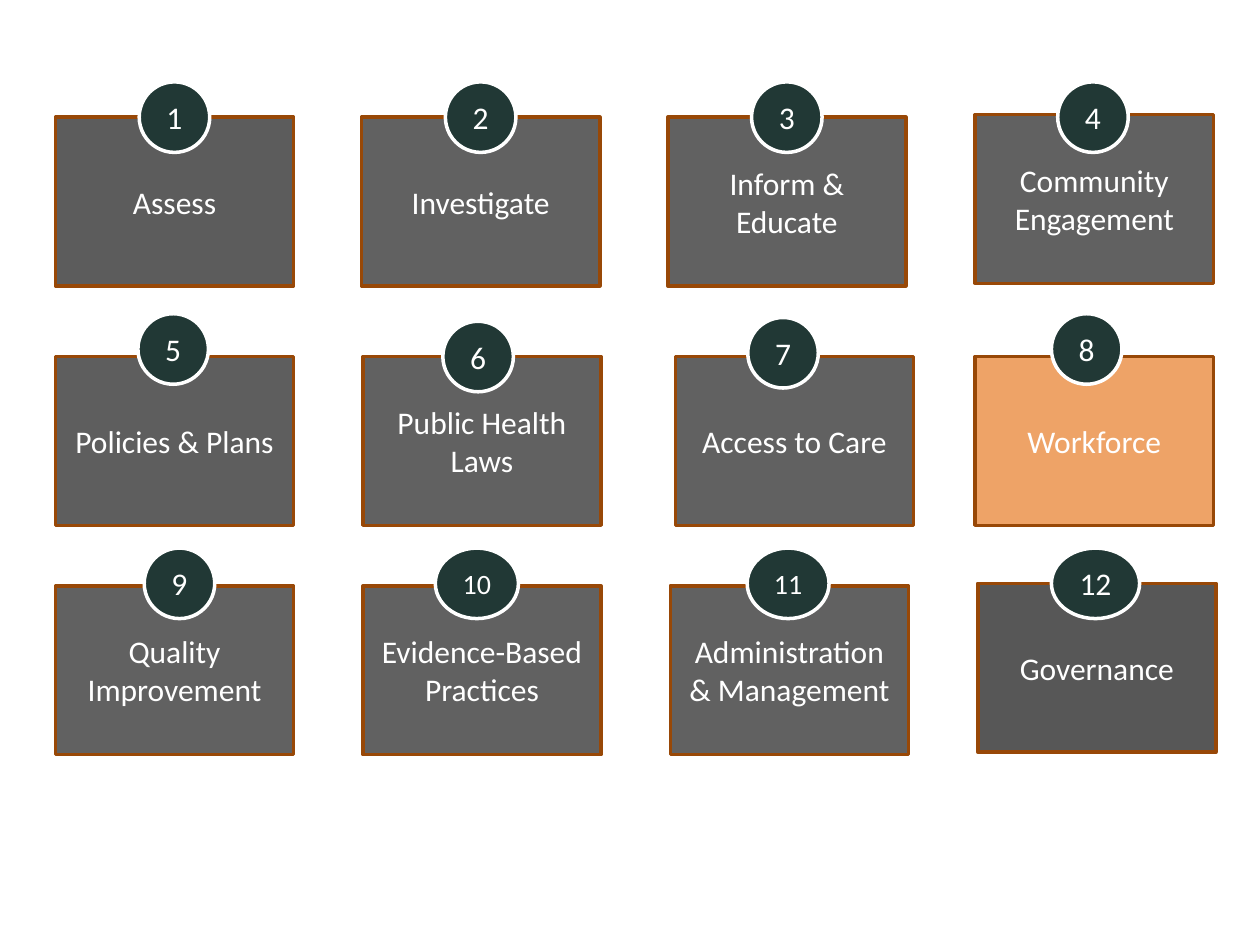
from dataclasses import dataclass

from lxml import etree
from pptx import Presentation
from pptx import util as u
from pptx.dml.color import RGBColor
from pptx.enum import shapes, text
from pptx.oxml import ns

BLACK = RGBColor(0x00, 0x00, 0x00)
WHITE = RGBColor(0xFF, 0xFF, 0xFF)
ORANGE = RGBColor(0xE4, 0x6C, 0x0A)
BROWN = RGBColor(0x98, 0x48, 0x07)
DARK_GREEN = RGBColor(0x21, 0x38, 0x35)

COLUMNS = 4
LEFT, COLUMN_STEP = 0.44, 2.43
CARD_TOPS = (0.93, 2.83, 4.65)
BADGE_TOPS = (0.65, 2.49, 4.35)
CARD_WIDTH, CARD_HEIGHT = 1.89, 1.34
BADGE_SIZE = 0.56


@dataclass
class Service:
    label: str
    card_shift: tuple = (0, 0)
    badge_shift: tuple = (0, 0)
    fill: RGBColor = BLACK
    opacity: int = 62
    badge_width: float = BADGE_SIZE
    badge_points: int = 18


SERVICES = [
    Service("Assess", opacity=64),
    Service("Investigate"),
    Service("Inform & Educate"),
    Service("Community Engagement", card_shift=(0.01, -0.02)),
    Service("Policies & Plans", badge_shift=(-0.01, 0), opacity=63),
    Service("Public Health Laws", card_shift=(0.01, 0), badge_shift=(-0.02, 0.06)),
    Service("Access to Care", card_shift=(0.06, 0), badge_shift=(-0.03, 0.03)),
    Service("Workforce", card_shift=(0.01, 0), badge_shift=(-0.05, 0), fill=ORANGE),
    Service("Quality Improvement", badge_shift=(0.04, 0)),
    Service("Evidence-Based Practices", card_shift=(0.01, 0), badge_shift=(-0.03, 0),
            badge_width=0.66, badge_points=16),
    Service("Administration & Management", card_shift=(0.02, 0), badge_shift=(0.01, 0),
            badge_width=0.65, badge_points=16),
    Service("Governance", card_shift=(0.03, -0.02), badge_shift=(0.02, 0),
            opacity=66, badge_width=0.7),
]


class ServiceGrid:
    font_name = "Calibri"
    line_width = u.Pt(2)

    def __init__(self, slide):
        self.slide = slide

    def labelled_shape(self, kind, bounds, fill, line, label, points):
        shape = self.slide.shapes.add_shape(kind, *(u.Inches(length) for length in bounds))
        shape.shadow.inherit = False
        shape.fill.solid()
        shape.fill.fore_color.rgb = fill
        shape.line.color.rgb = line
        shape.line.width = self.line_width
        frame = shape.text_frame
        frame.text = label
        frame.word_wrap = True
        frame.vertical_anchor = text.MSO_ANCHOR.MIDDLE
        paragraph = frame.paragraphs[0]
        paragraph.alignment = text.PP_ALIGN.CENTER
        paragraph.font.name = self.font_name
        paragraph.font.size = u.Pt(points)
        paragraph.font.color.rgb = WHITE
        return shape

    def card(self, column, row, service):
        across, down = service.card_shift
        bounds = (LEFT + column * COLUMN_STEP + across, CARD_TOPS[row] + down,
                  CARD_WIDTH, CARD_HEIGHT)
        card = self.labelled_shape(shapes.MSO_SHAPE.RECTANGLE, bounds,
                                   service.fill, BROWN, service.label, 18)
        color = card.fill._xPr.find(ns.qn("a:solidFill"))[0]
        etree.SubElement(color, ns.qn("a:alpha"), val=str(service.opacity * 1000))

    def badge(self, column, row, number, service):
        across, down = service.badge_shift
        center = LEFT + column * COLUMN_STEP + CARD_WIDTH / 2 + across
        bounds = (center - service.badge_width / 2, BADGE_TOPS[row] + down,
                  service.badge_width, BADGE_SIZE)
        self.labelled_shape(shapes.MSO_SHAPE.OVAL, bounds, DARK_GREEN, WHITE,
                            str(number), service.badge_points)


def main():
    deck = Presentation()
    deck.slide_width, deck.slide_height = u.Inches(10), u.Inches(7.5)
    grid = ServiceGrid(deck.slides.add_slide(deck.slide_layouts[6]))
    for index, service in enumerate(SERVICES):
        row, column = divmod(index, COLUMNS)
        grid.card(column, row, service)
    for index, service in enumerate(SERVICES):
        row, column = divmod(index, COLUMNS)
        grid.badge(column, row, index + 1, service)
    deck.save("out.pptx")


if __name__ == "__main__":
    main()
